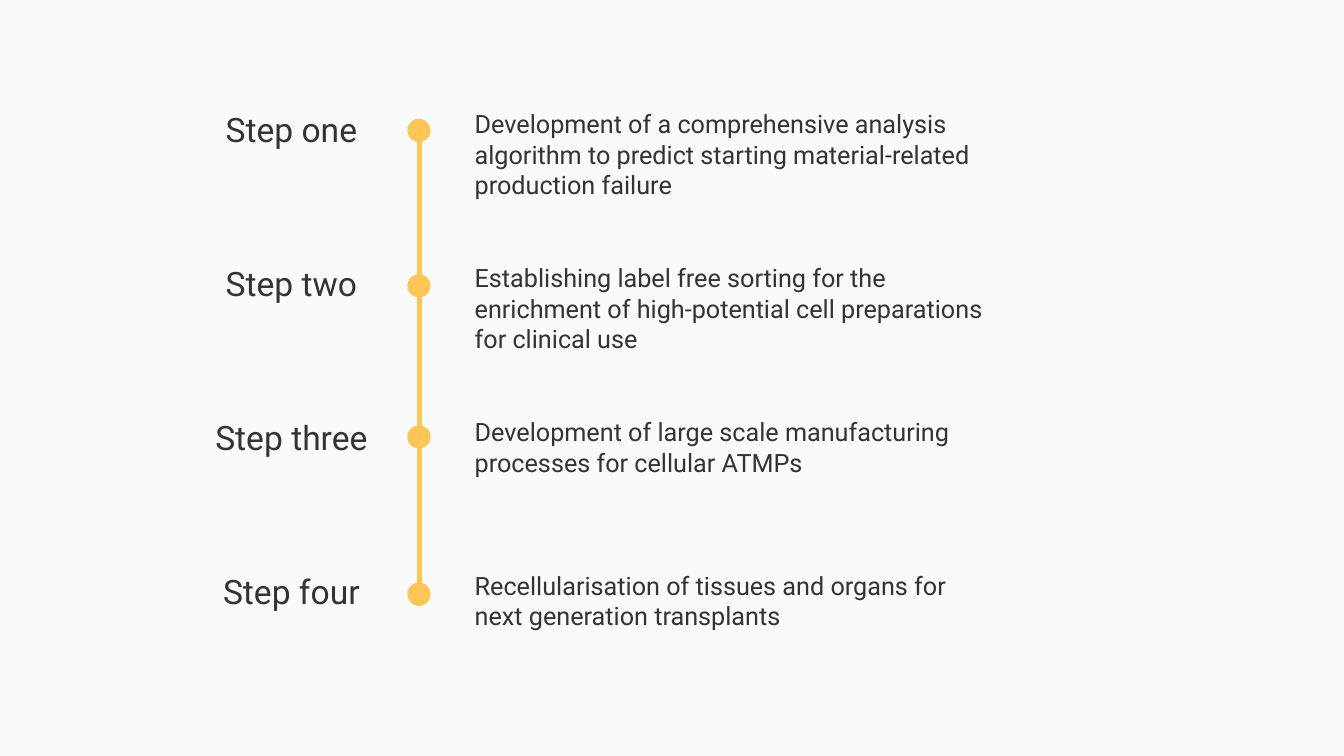
from pptx import Presentation
from pptx import util as u
from pptx.dml.color import RGBColor
from pptx.enum import shapes, text
from pptx.oxml.ns import qn
from lxml import etree


def colour(value):
    return RGBColor.from_string(value)


class TimelineSlide:
    font = "Roboto"
    ink = "333333"
    accent = "FFC556"
    background = "FAFAFA"

    def __init__(self, deck):
        self.page = deck.slides.add_slide(deck.slide_layouts[6])
        fill = self.page.background.fill
        fill.solid()
        fill.fore_color.rgb = colour(self.background)

    def label(self, left, top, width, height, words, size, align):
        box = self.page.shapes.add_textbox(
            u.Inches(left), u.Inches(top), u.Inches(width), u.Inches(height))
        frame = box.text_frame
        frame.word_wrap = True
        frame.auto_size = text.MSO_AUTO_SIZE.SHAPE_TO_FIT_TEXT
        para = frame.paragraphs[0]
        para.alignment = align
        span = para.add_run()
        span.text = words
        span.font.name = self.font
        span.font.size = u.Pt(size)
        span.font.color.rgb = colour(self.ink)

    def line(self, x, top, bottom, weight):
        connector = self.page.shapes.add_connector(
            shapes.MSO_CONNECTOR.STRAIGHT,
            u.Inches(x), u.Inches(top), u.Inches(x), u.Inches(bottom))
        connector.line.color.rgb = colour(self.accent)
        connector.line.width = u.Pt(weight)
        etree.SubElement(connector.element.spPr, qn("a:effectLst"))

    def dot(self, left, top, size):
        marker = self.page.shapes.add_shape(
            shapes.MSO_SHAPE.OVAL,
            u.Inches(left), u.Inches(top), u.Inches(size), u.Inches(size))
        marker.shadow.inherit = False
        marker.fill.solid()
        marker.fill.fore_color.rgb = colour(self.accent)
        marker.line.fill.background()


STEPS = [
    ("Step one", 1.18, 5.33, 1.01,
     "Development of a comprehensive analysis algorithm to predict "
     "starting material-related production failure"),
    ("Step two", 2.72, 5.33, 1.01,
     "Establishing label free sorting for the enrichment of "
     "high-potential cell preparations for clinical use"),
    ("Step three", 4.22, 5.23, 0.71,
     "Development of large scale manufacturing processes for cellular ATMPs"),
    ("Step four", 5.78, 5.23, 0.71,
     "Recellularisation of tissues and organs for next generation transplants"),
]
FIRST_TOP, LAST_TOP = 1.03, 5.61


def main():
    deck = Presentation()
    deck.slide_width = u.Inches(13.33)
    deck.slide_height = u.Inches(7.5)
    timeline = TimelineSlide(deck)
    pitch = (LAST_TOP - FIRST_TOP) / (len(STEPS) - 1)

    timeline.line(4.16, 1.25, 6.01, 4)
    for index, (name, dot_top, width, height, description) in enumerate(STEPS):
        top = FIRST_TOP + index * pitch
        timeline.label(1.7, top, 2.38, 0.5, name, 24, text.PP_ALIGN.CENTER)
        timeline.label(4.61, top, width, height, description, 18, text.PP_ALIGN.LEFT)
        timeline.dot(4.04, dot_top, 0.23)

    deck.save("out.pptx")


if __name__ == "__main__":
    main()
